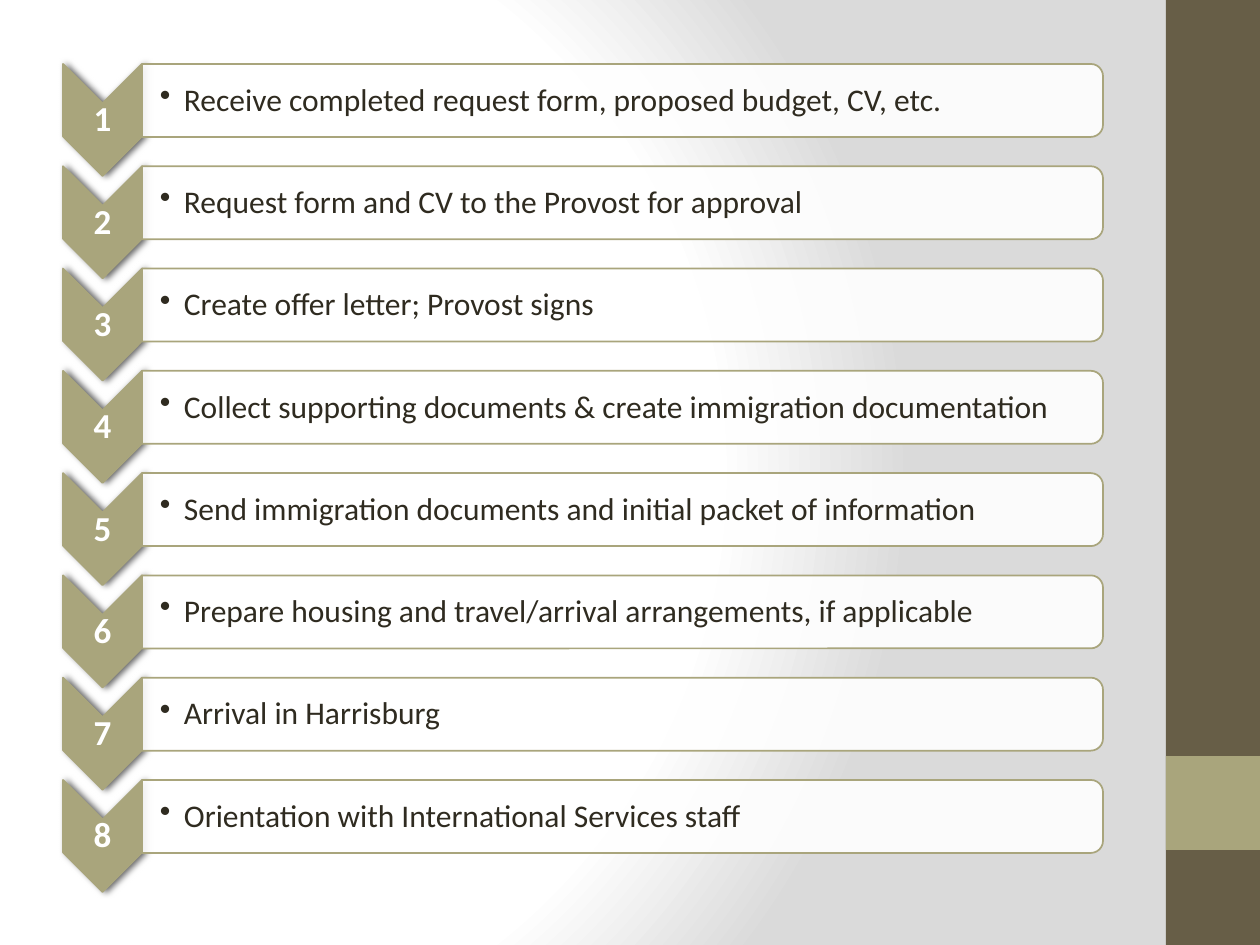
from lxml.etree import SubElement
from pptx import Presentation
from pptx.dml.color import RGBColor
from pptx.enum.shapes import MSO_SHAPE as SHAPE
from pptx.enum.text import MSO_ANCHOR as ANCHOR, PP_ALIGN as ALIGN
from pptx.oxml import parse_xml
from pptx.oxml.ns import nsdecls, qn
from pptx.util import Emu, Pt

OLIVE = RGBColor(0xA9, 0xA5, 0x7C)
BROWN = RGBColor(0x67, 0x5E, 0x47)
WHITE = RGBColor(0xFF, 0xFF, 0xFF)
GREY = RGBColor(0xDA, 0xDA, 0xDA)
INK = RGBColor(0x2F, 0x2B, 0x20)

NUMBER = {"size": Pt(20), "name": "Calibri", "bold": True}
BODY = {"size": Pt(18), "name": "Calibri", "bold": False}
STEPS = [
    "Receive completed request form, proposed budget, CV, etc.",
    "Request form and CV to the Provost for approval",
    "Create offer letter; Provost signs",
    "Collect supporting documents & create immigration documentation",
    "Send immigration documents and initial packet of information",
    "Prepare housing and travel/arrival arrangements, if applicable",
    "Arrival in Harrisburg",
    "Orientation with International Services staff",
]


def px(n):
    """Turn px into EMU."""
    return Emu(round(n * 914400 / 126))


def add_sp(s, kind, x, y, w, h, fill, line=None):
    """Add a preset shape with a plain fill and an optional 1 pt line."""
    sp = s.shapes.add_shape(kind, px(x), px(y), px(w), px(h))
    sp.shadow.inherit = False
    sp.fill.solid()
    sp.fill.fore_color.rgb = fill
    if line is None:
        sp.line.fill.background()
    else:
        sp.line.color.rgb = line
        sp.line.width = Pt(1)
    return sp


def add_turned(s, kind, x, y, w, h, fill, line):
    """Add a shape turned by 90 degrees that fills the given upright box."""
    sp = add_sp(s, kind, x + (w - h) / 2, y + (h - w) / 2, h, w, fill, line)
    sp.rotation = 90
    return sp


def add_text(s, x, y, w, h, text, font, color, inset=1):
    """Add a middle-anchored text box and return its paragraph."""
    tf = s.shapes.add_textbox(px(x), px(y), px(w), px(h)).text_frame
    layout = {"word_wrap": True, "vertical_anchor": ANCHOR.MIDDLE,
              "margin_left": px(inset), "margin_right": px(1),
              "margin_top": px(1), "margin_bottom": px(1)}
    for key, value in layout.items():
        setattr(tf, key, value)
    p = tf.paragraphs[0]
    p.line_spacing = 0.9
    r = p.add_run()
    r.text = text
    for key, value in font.items():
        setattr(r.font, key, value)
    r.font.color.rgb = color
    return p


def add_bullet(p, indent):
    """Give a paragraph a round bullet with a hanging indent."""
    p.level = 1
    pPr = p._p.get_or_add_pPr()
    pPr.set("marL", str(px(indent)))
    pPr.set("indent", str(-px(indent)))
    SubElement(pPr, qn("a:buChar"), char="•")


def add_shadow(sp):
    """Give a shape a soft dark outer shadow."""
    effects = sp._element.spPr.find(qn("a:effectLst"))
    shadow = SubElement(effects, qn("a:outerShdw"), blurRad=str(Pt(4)),
                        dist=str(Pt(2)), dir="0", rotWithShape="0")
    color = SubElement(shadow, qn("a:srgbClr"), val="000000")
    SubElement(color, qn("a:alpha"), val="60000")


def paint_background(s):
    """Fill the slide background with a circular white to grey gradient."""
    s.background.fill.solid()
    solid = s.background._cSld.find(".//" + qn("a:solidFill"))
    stops = "".join(
        f'<a:gs pos="{pos}000"><a:srgbClr val="{color}"/></a:gs>'
        for pos, color in ((0, WHITE), (75, WHITE), (100, GREY)))
    grad = parse_xml(
        f'<a:gradFill {nsdecls("a")} rotWithShape="1"><a:gsLst>{stops}</a:gsLst>'
        '<a:path path="circle"><a:fillToRect l="20000" t="50000" r="100000" '
        'b="50000"/></a:path></a:gradFill>')
    solid.getparent().replace(solid, grad)


def add_sidebar(s, x, y, w, h):
    """Draw the brown side band with its square accent."""
    add_sp(s, SHAPE.RECTANGLE, x, y, w, h, BROWN)
    add_sp(s, SHAPE.RECTANGLE, x, y + h * 4 / 5, w, w, OLIVE)


def add_step(s, x, y, w, h, number, text):
    """Draw one numbered chevron with its text bar."""
    chevron_w, bar_h = 79, 73
    bar_x, bar_w = x + chevron_w, w - chevron_w
    chevron = add_turned(s, SHAPE.CHEVRON, x, y, chevron_w, h, OLIVE, OLIVE)
    add_shadow(chevron)
    p = add_text(s, x, y + 40, chevron_w, h - 79, str(number), NUMBER, WHITE)
    p.alignment = ALIGN.CENTER
    p.space_after = Pt(7)
    bar = add_turned(s, SHAPE.ROUND_2_SAME_RECTANGLE, bar_x, y, bar_w, bar_h,
                     WHITE, OLIVE)
    color = bar._element.spPr.find(qn("a:solidFill"))[0]
    SubElement(color, qn("a:alpha"), val="90000")
    p = add_text(s, bar_x, y + 4, bar_w - 4, bar_h - 7, text, BODY, INK, 18)
    p.space_after = Pt(3)
    add_bullet(p, 24)


def add_steps(s, x, y, w, h, steps):
    """Spread the steps evenly down the box."""
    step_h = 112
    pitch = (h - step_h) / (len(steps) - 1)
    for i, text in enumerate(steps):
        add_step(s, x, y + i * pitch, w, step_h, i + 1, text)


def main():
    """Build and save the slide."""
    prs = Presentation()
    prs.slide_width, prs.slide_height = px(1260), px(945)
    s = prs.slides.add_slide(prs.slide_layouts[6])
    paint_background(s)
    add_sidebar(s, 1166, 0, 94, 945)
    add_steps(s, 63, 64, 1040, 828, STEPS)
    prs.save("out.pptx")


if __name__ == "__main__":
    main()
